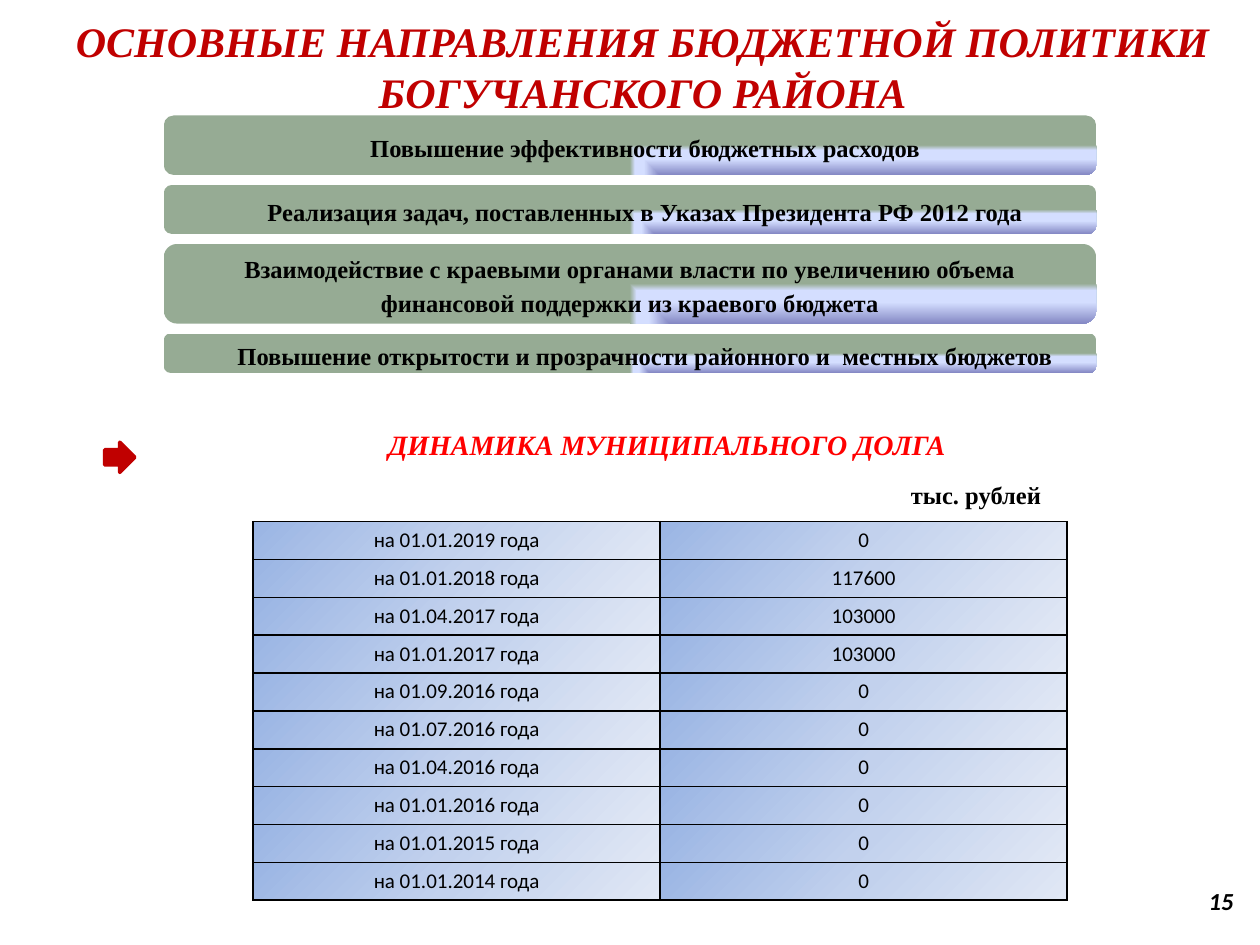
from lxml import etree
from pptx import Presentation
from pptx.dml.color import RGBColor
from pptx.enum import shapes, text
from pptx.oxml import ns
from pptx.util import Pt

SERIF, SANS = "Times New Roman", "Calibri"
DARK_RED, RED, BLACK = "C00000", "FF0000", "000000"
CENTER, RIGHT, LEFT = text.PP_ALIGN.CENTER, text.PP_ALIGN.RIGHT, text.PP_ALIGN.LEFT

BAR_STOPS = [(0, "8488C4"), (53, "D4DEFF"), (83, "D4DEFF"), (100, "96AB94")]
CELL_STOPS = [(0, "9AB5E4"), (50, "C2D1ED"), (100, "E1E8F5")]
FROM_CORNER = ("path", {"path": "rect"})
DIAGONAL = ("lin", {"ang": "2700000", "scaled": "0"})

# text, height, left indent
DIRECTIONS = [
    ("Повышение эффективности бюджетных расходов", 34, 17.5),
    ("Реализация задач, поставленных в Указах Президента РФ 2012 года", 28, 17.5),
    ("Взаимодействие с краевыми органами власти по увеличению объема "
     "финансовой поддержки из краевого бюджета", 45.5, 0),
    ("Повышение открытости и прозрачности районного и  местных бюджетов", 22.5, 17.5),
]
DEBT = [
    ("01.01.2019", 0), ("01.01.2018", 117600), ("01.04.2017", 103000),
    ("01.01.2017", 103000), ("01.09.2016", 0), ("01.07.2016", 0),
    ("01.04.2016", 0), ("01.01.2016", 0), ("01.01.2015", 0), ("01.01.2014", 0),
]


def color(value):
    return RGBColor.from_string(value)


def add(parent, tag, **attributes):
    return etree.SubElement(parent, ns.qn("a:" + tag), attributes)


def set_gradient(fill, properties, stops, direction):
    """Swap the fill of a shape or cell for a gradient."""
    fill.background()
    gradient = etree.Element(ns.qn("a:gradFill"), rotWithShape="1")
    stop_list = add(gradient, "gsLst")
    for position, value in stops:
        stop = add(stop_list, "gs", pos=str(position * 1000))
        add(stop, "srgbClr", val=value)
    tag, attributes = direction
    shade = add(gradient, tag, **attributes)
    if tag == "path":
        add(shade, "fillToRect", l="100000", t="100000")
    properties.replace(properties.find(ns.qn("a:noFill")), gradient)


def set_borders(properties, value, width):
    for index, side in enumerate(("lnL", "lnR", "lnT", "lnB")):
        line = etree.Element(ns.qn("a:" + side), w=str(Pt(width)))
        add(add(line, "solidFill"), "srgbClr", val=value)
        properties.insert(index, line)


class Slide:
    def __init__(self, deck):
        self.page = deck.slides.add_slide(deck.slide_layouts[5])

    def set_text(self, frame, words, size, font=SERIF, ink=BLACK, bold=True,
                 italic=False, align=CENTER, indent=0, spacing=None):
        frame.text = words
        frame.word_wrap = True
        para = frame.paragraphs[0]
        para.alignment = align
        para.line_spacing = spacing
        if indent:
            para._p.get_or_add_pPr().set("marL", str(Pt(indent)))
        for span in para.runs:
            span.font.name, span.font.size = font, Pt(size)
            span.font.bold, span.font.italic = bold, italic
            span.font.color.rgb = color(ink)

    def title(self, words, left, top, width, height):
        box = self.page.shapes.title
        box.left, box.top, box.width, box.height = map(Pt, (left, top, width, height))
        self.set_text(box.text_frame, words, 24, ink=DARK_RED, italic=True)
        box.text_frame.auto_size = text.MSO_AUTO_SIZE.NONE
        box.text_frame.vertical_anchor = text.MSO_ANCHOR.MIDDLE

    def label(self, words, left, top, width, height, size, **style):
        box = self.page.shapes.add_textbox(*map(Pt, (left, top, width, height)))
        self.set_text(box.text_frame, words, size, **style)
        box.text_frame.vertical_anchor = text.MSO_ANCHOR.MIDDLE

    def shape(self, kind, left, top, width, height):
        shape = self.page.shapes.add_shape(kind, *map(Pt, (left, top, width, height)))
        shape.shadow.inherit = False
        return shape

    def bar(self, words, left, top, width, height, indent):
        bar = self.shape(shapes.MSO_SHAPE.ROUNDED_RECTANGLE, left, top, width, height)
        set_gradient(bar.fill, bar._element.spPr, BAR_STOPS, FROM_CORNER)
        bar.line.fill.background()
        self.set_text(bar.text_frame, words, 14, indent=indent, spacing=1.15)
        bar.text_frame.vertical_anchor = text.MSO_ANCHOR.MIDDLE

    def arrow(self, left, top, size):
        arrow = self.shape(shapes.MSO_SHAPE.RIGHT_ARROW, left, top, size, size)
        arrow.fill.solid()
        arrow.fill.fore_color.rgb = arrow.line.color.rgb = color(DARK_RED)
        arrow.line.width = Pt(2)

    def table(self, rows, left, top, width, row_height):
        frame = self.page.shapes.add_table(
            len(rows), 2, Pt(left), Pt(top), Pt(width), Pt(row_height * len(rows)))
        table = frame.table
        table.first_row = table.horz_banding = False
        for row, values in zip(table.rows, rows):
            row.height = Pt(row_height)
            for cell, value in zip(row.cells, values):
                cell.margin_top = cell.margin_bottom = Pt(3.4)
                self.set_text(cell.text_frame, str(value), 12, font=SANS, bold=False)
                properties = cell._tc.get_or_add_tcPr()
                set_gradient(cell.fill, properties, CELL_STOPS, DIAGONAL)
                set_borders(properties, BLACK, 1)


def main():
    deck = Presentation()
    deck.slide_width, deck.slide_height = Pt(720), Pt(540)
    slide = Slide(deck)
    slide.title("ОСНОВНЫЕ НАПРАВЛЕНИЯ БЮДЖЕТНОЙ ПОЛИТИКИ БОГУЧАНСКОГО РАЙОНА",
                14.4, 5, 705.6, 65.5)

    top, gap = 66, 5.7
    for words, height, indent in DIRECTIONS:
        slide.bar(words, 93.6, top, 532.8, height, indent)
        top += height + gap

    slide.arrow(59.8, 252.7, 17.3)
    slide.label("ДИНАМИКА МУНИЦИПАЛЬНОГО ДОЛГА", 70.6, 241, 601.2, 26, 16,
                ink=RED, italic=True, indent=20)
    slide.label("тыс. рублей", 513.4, 270.5, 130.3, 24.5, 14, align=LEFT)
    slide.table([(f"на {date} года", amount) for date, amount in DEBT],
                144.7, 298.1, 465.1, 21.65)
    slide.label("15", 516.2, 500.4, 195.8, 28.8, 14, font=SANS, italic=True, align=RIGHT)
    deck.save("out.pptx")


if __name__ == "__main__":
    main()
